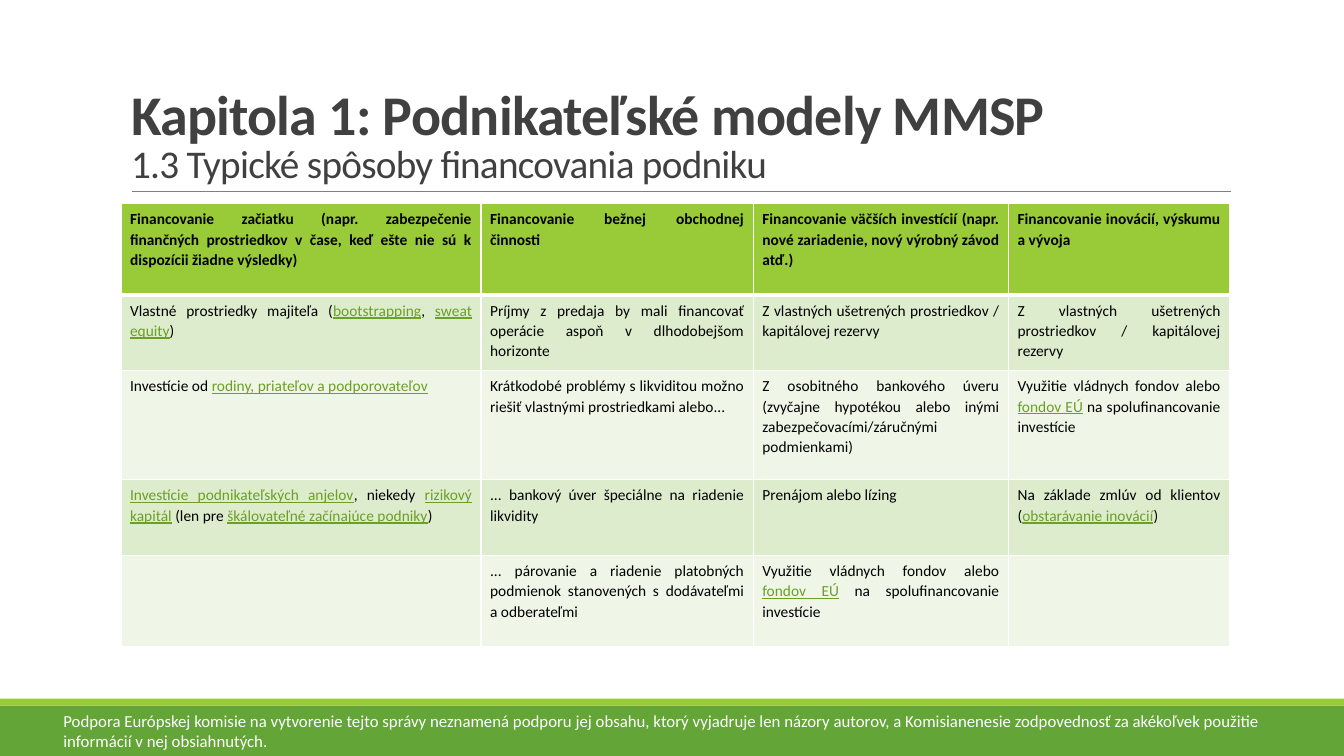
"""Build the slide on typical ways of financing a small business."""
from copy import deepcopy

from lxml.etree import SubElement
from pptx import Presentation
from pptx.dml.color import RGBColor
from pptx.enum.shapes import MSO_CONNECTOR as Connector, MSO_SHAPE as Shape
from pptx.enum.text import MSO_ANCHOR as Anchor, MSO_AUTO_SIZE as AutoSize, PP_ALIGN as Align
from pptx.oxml.ns import qn
from pptx.util import Pt

COLORS = {
    "white": "FFFFFF", "black": "000000", "heading": "404040", "rule": "808080",
    "green": "63A537", "lime": "99CB38", "link": "6B9F25",
    "band_dark": "DEECCE", "band_light": "EFF6E8",
}
COLUMN_WIDTHS = [257.2, 194.5, 182.3, 158]
ROW_HEIGHTS = [65.4, 54, 77.9, 54, 65.4]
EU_FUNDS = "Využitie vládnych fondov alebo [fondov EÚ] na spolufinancovanie investície"
SAVINGS = "Z vlastných ušetrených prostriedkov / kapitálovej rezervy"
ROWS = [
    ["Financovanie začiatku (napr. zabezpečenie finančných prostriedkov v čase, "
     "keď ešte nie sú k dispozícii žiadne výsledky)",
     "Financovanie bežnej obchodnej činnosti",
     "Financovanie väčších investícií (napr. nové zariadenie, nový výrobný závod atď.)",
     "Financovanie inovácií, výskumu a vývoja"],
    ["Vlastné prostriedky majiteľa ([bootstrapping], [sweat equity])",
     "Príjmy z predaja by mali financovať operácie aspoň v dlhodobejšom horizonte",
     SAVINGS, SAVINGS],
    ["Investície od [rodiny, priateľov a podporovateľov]",
     "Krátkodobé problémy s likviditou možno riešiť vlastnými prostriedkami alebo...",
     "Z osobitného bankového úveru (zvyčajne hypotékou alebo inými "
     "zabezpečovacími/záručnými podmienkami)",
     EU_FUNDS],
    ["[Investície podnikateľských anjelov], niekedy [rizikový kapitál] "
     "(len pre [škálovateľné začínajúce podniky])",
     "... bankový úver špeciálne na riadenie likvidity",
     "Prenájom alebo lízing",
     "Na základe zmlúv od klientov ([obstarávanie inovácií])"],
    ["",
     "... párovanie a riadenie platobných podmienok stanovených s dodávateľmi a odberateľmi",
     EU_FUNDS, ""],
]


def write(para, text, size=11, color="black", bold=False, underline=False):
    span = para.add_run()
    span.text = text
    span.font.name = "Calibri"
    span.font.size = Pt(size)
    span.font.bold = bold
    span.font.underline = underline
    span.font.color.rgb = RGBColor.from_string(COLORS[color])
    return span


deck = Presentation()
deck.slide_width, deck.slide_height = Pt(960), Pt(540)
page = deck.slides.add_slide(deck.slide_layouts[5])

for top, height, color in [(504, 36, "green"), (499, 5, "lime")]:
    band = page.shapes.add_shape(Shape.RECTANGLE, Pt(0), Pt(top), Pt(960), Pt(height))
    band.shadow.inherit = False
    band.fill.solid()
    band.fill.fore_color.rgb = RGBColor.from_string(COLORS[color])
    band.line.fill.background()

rule = page.shapes.add_connector(Connector.STRAIGHT, Pt(94.3), Pt(136.8), Pt(879), Pt(136.8))
rule.line.color.rgb = RGBColor.from_string(COLORS["rule"])
rule.line.width = Pt(0.5)
SubElement(rule._element.spPr, qn("a:effectLst"))

title = page.shapes.title
title.left, title.top, title.width, title.height = Pt(86.4), Pt(22.3), Pt(792), Pt(114.5)
title.text_frame.auto_size = AutoSize.NONE
title.text_frame.word_wrap = True
title.text_frame.vertical_anchor = Anchor.BOTTOM
para = title.text_frame.paragraphs[0]
para.alignment = Align.LEFT
para.line_spacing = 0.85
chapter = write(para, "Kapitola 1: Podnikateľské modely MMSP", size=40, color="heading", bold=True)
para.add_line_break()
section = write(para, "1.3 Typické spôsoby financovania podniku", size=28, color="heading")
for span in (chapter, section):
    span.font._element.set("spc", "-50")
para._p.find(qn("a:br")).append(deepcopy(chapter.font._element))

box = page.shapes.add_textbox(Pt(38.2), Pt(504), Pt(885.6), Pt(36))
box.text_frame.word_wrap = True
write(box.text_frame.paragraphs[0],
      "Podpora Európskej komisie na vytvorenie tejto správy neznamená podporu jej obsahu, "
      "ktorý vyjadruje len názory autorov, a Komisianenesie zodpovednosť za akékoľvek "
      "použitie informácií v nej obsiahnutých.", size=12, color="white")

table = page.shapes.add_table(len(ROWS), len(COLUMN_WIDTHS), Pt(86.4), Pt(145.4),
                              Pt(sum(COLUMN_WIDTHS)), Pt(sum(ROW_HEIGHTS))).table
for column, width in zip(table.columns, COLUMN_WIDTHS):
    column.width = Pt(width)
for row, height in zip(table.rows, ROW_HEIGHTS):
    row.height = Pt(height)

for row_index, texts in enumerate(ROWS):
    header = row_index == 0
    band_color = "lime" if header else ("band_light", "band_dark")[row_index % 2]
    edges = {"lnL": 1, "lnR": 1, "lnT": 3 if row_index == 1 else 1, "lnB": 3 if header else 1}
    for column_index, text in enumerate(texts):
        cell = table.cell(row_index, column_index)
        cell.margin_left = cell.margin_right = Pt(6.5)
        cell.margin_top = cell.margin_bottom = Pt(3.6)
        for edge, width in edges.items():
            line = SubElement(cell._tc.get_or_add_tcPr(), qn(f"a:{edge}"), w=str(Pt(width)))
            SubElement(SubElement(line, qn("a:solidFill")), qn("a:srgbClr"), val=COLORS["white"])
        cell.fill.solid()
        cell.fill.fore_color.rgb = RGBColor.from_string(COLORS[band_color])
        para = cell.text_frame.paragraphs[0]
        para.alignment = Align.JUSTIFY
        para.line_spacing = 1.07
        para.space_after = Pt(8)
        for part_index, part in enumerate(text.replace("]", "[").split("[")):
            linked = part_index % 2 == 1
            if part:
                write(para, part, color="link" if linked else "black",
                      bold=header, underline=linked)

deck.save("out.pptx")
